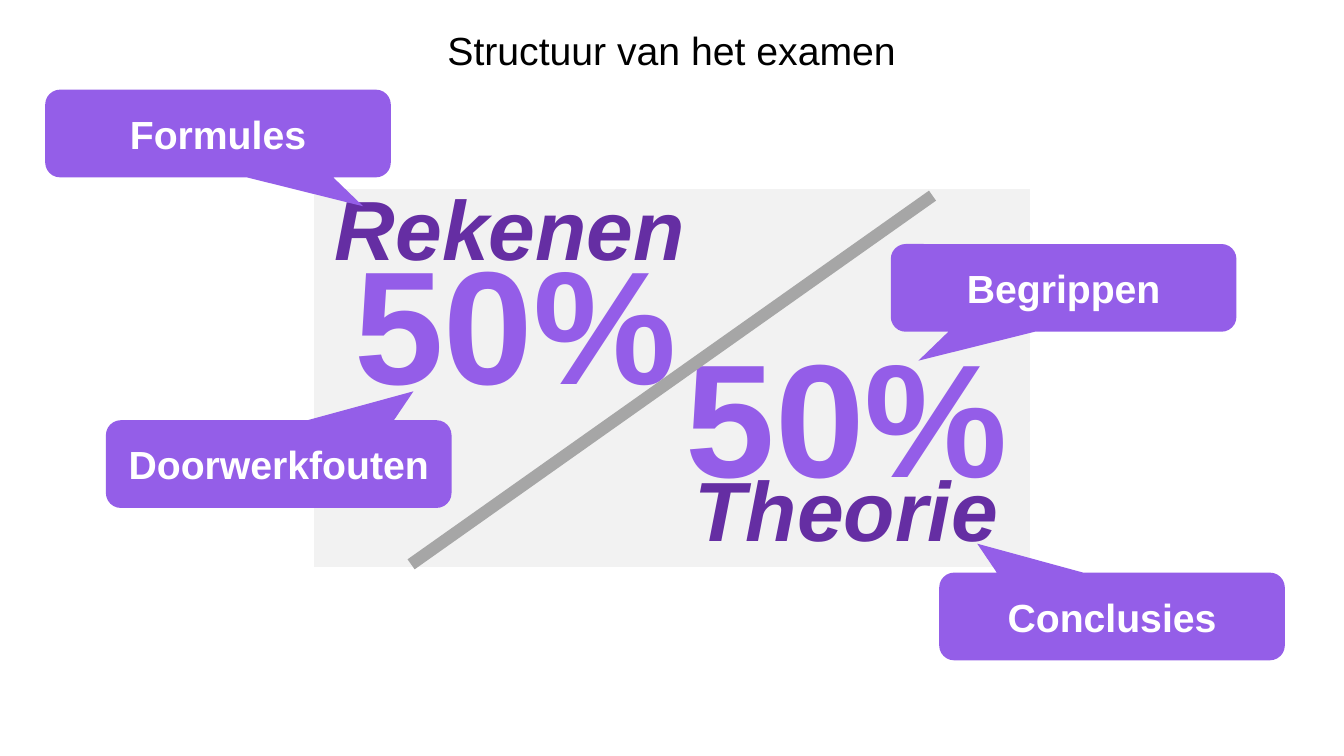
"""Build the slide that shows how the exam is split into two halves."""
from dataclasses import dataclass

from pptx import Presentation, util as u
from pptx.dml.color import RGBColor
from pptx.enum import shapes as es, text as et
from pptx.oxml import ns, xmlchemy as xc

HUES = {
    "panel": "F2F2F2",
    "slash": "A6A6A6",
    "share": "945DE8",
    "topic": "652EA3",
    "call": "945EE8",
    "white": "FFFFFF",
    "black": "000000",
}
FONTS = {
    "title": {"size": u.Pt(28), "bold": False},
    "share": {"size": u.Pt(115), "bold": True},
    "topic": {"size": u.Pt(60), "bold": True, "italic": True},
    "call": {"size": u.Pt(28), "bold": True},
}
SIZES = {"share": (9.45, 5.18), "topic": (9.7, 2.82), "call": (8.71, 2.21)}


@dataclass
class Label:
    """A large word or number, placed by its left top corner in cm."""

    words: str
    style: str
    left: float
    top: float


@dataclass
class Call:
    """A speech balloon with the place of its tip relative to its size."""

    words: str
    left: float
    top: float
    tip: tuple[float, float]


LABELS = [
    Label("50%", "share", 8.26, 5.51),
    Label("Rekenen", "topic", 8, 4.32),
    Label("50%", "share", 16.61, 7.85),
    Label("Theorie", "topic", 16.48, 11.4),
]
CALLS = [
    Call("Doorwerkfouten", 2.67, 10.59, (0.39, -0.83)),
    Call("Formules", 1.14, 2.26, (0.42, 0.83)),
    Call("Conclusies", 23.67, 14.43, (-0.39, -0.83)),
    Call("Begrippen", 22.45, 6.15, (-0.42, 0.83)),
]


def tint(name: str) -> RGBColor:
    """Return a named colour."""
    return RGBColor.from_string(HUES[name])


def cms(*nums: float) -> list[u.Cm]:
    """Turn numbers into lengths."""
    return [u.Cm(num) for num in nums]


def write(shape, words: str, style: str, hue: str, anchor) -> None:
    """Put one centred, formatted line of text in a shape."""
    frame = shape.text_frame
    frame.text = words
    look = {
        "word_wrap": True,
        "auto_size": et.MSO_AUTO_SIZE.NONE,
        "vertical_anchor": anchor,
    }
    for key, val in look.items():
        setattr(frame, key, val)
    line = frame.paragraphs[0]
    line.alignment = et.PP_ALIGN.CENTER
    font = line.runs[0].font
    for key, val in {"name": "Arial", **FONTS[style]}.items():
        setattr(font, key, val)
    font.color.rgb = tint(hue)


def head(slide, words: str) -> None:
    """Place and fill the title."""
    title = slide.shapes.title
    spot = {"left": 5.94, "top": 0.53, "width": 21.97, "height": 1.45}
    for key, val in spot.items():
        setattr(title, key, u.Cm(val))
    write(title, words, "title", "black", et.MSO_ANCHOR.TOP)


def block(slide, kind, box: list[u.Cm], hue: str):
    """Add a flat filled shape without an outline."""
    shape = slide.shapes.add_shape(kind, *box)
    shape.shadow.inherit = False
    shape.fill.solid()
    shape.fill.fore_color.rgb = tint(hue)
    shape.line.fill.background()
    return shape


def panel(slide) -> None:
    """Add the pale panel behind both halves."""
    box = cms(7.92, 4.78, 18.03, 9.5)
    shape = block(slide, es.MSO_SHAPE.RECTANGLE, box, "panel")
    shape.line.color.rgb = tint("panel")
    shape.line.width = u.Pt(1)


def label(slide, item: Label) -> None:
    """Add a large word or number."""
    box = cms(item.left, item.top, *SIZES[item.style])
    shape = slide.shapes.add_textbox(*box)
    write(shape, item.words, item.style, item.style, et.MSO_ANCHOR.TOP)


def slash(slide) -> None:
    """Add the thick diagonal between the halves."""
    ends = cms(23.5, 4.93, 10.36, 14.22)
    line = slide.shapes.add_connector(es.MSO_CONNECTOR.STRAIGHT, *ends)
    line.line.color.rgb = tint("slash")
    line.line.width = u.Pt(8.75)
    flat = xc.OxmlElement("a:effectLst")
    line._element.find(ns.qn("p:spPr")).append(flat)


def call(slide, item: Call) -> None:
    """Add a speech balloon."""
    kind = es.MSO_SHAPE.ROUNDED_RECTANGULAR_CALLOUT
    box = cms(item.left, item.top, *SIZES["call"])
    shape = block(slide, kind, box, "call")
    for num, val in enumerate((*item.tip, 0.17)):
        shape.adjustments[num] = val
    write(shape, item.words, "call", "white", et.MSO_ANCHOR.MIDDLE)


def main() -> None:
    """Build and save the slide."""
    deck = Presentation()
    deck.slide_width, deck.slide_height = cms(33.87, 19.05)
    slide = deck.slides.add_slide(deck.slide_layouts[5])
    head(slide, "Structuur van het examen")
    panel(slide)
    for item in LABELS:
        label(slide, item)
    slash(slide)
    for item in CALLS:
        call(slide, item)
    deck.save("out.pptx")


if __name__ == "__main__":
    main()
